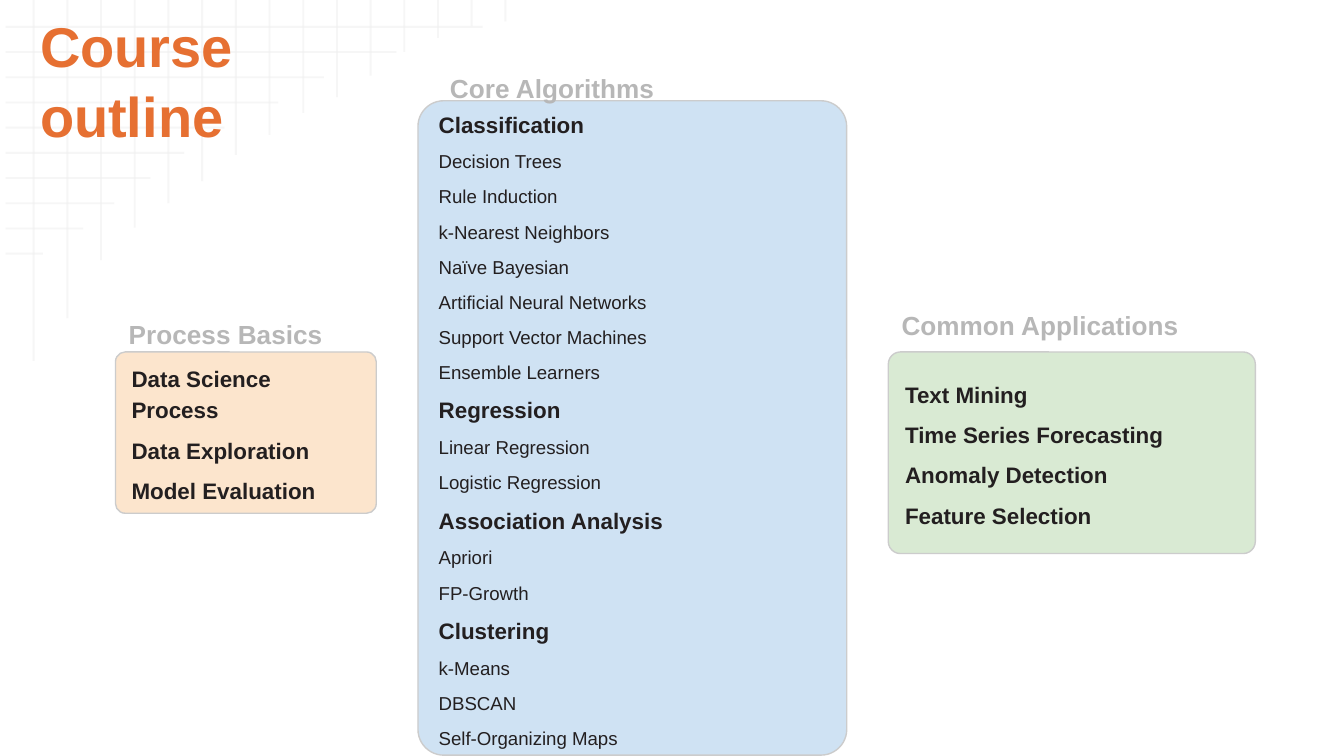
from dataclasses import dataclass

from lxml import etree
from pptx import Presentation
from pptx.dml import color
from pptx.enum import shapes, text
from pptx.oxml import ns
from pptx.util import Pt

BODY = "231F20"
HEADING = "B7B7B7"
GRID_LEFT, GRID_TOP = 3, 14.4
COLUMN_STEP, ROW_STEP = 18.05, 13.5
ROW_ENDS = (258.5, 212.4, 173.5, 149, 120.2, 98.6, 80.6, 61.2, 44.6, 23)
COLUMN_ENDS = (193.4, 170.4, 139.3, 122, 108.8, 97, 83, 72.3, 60.5, 52,
               40.5, 27.8, 20.3, 14, 11.5)


@dataclass(frozen=True)
class Line:
    words: str
    size: float = 12
    bold: bool = True


@dataclass(frozen=True)
class Box:
    left: float
    top: float
    width: float
    height: float


@dataclass(frozen=True)
class Section:
    heading: str
    heading_box: Box
    panel_box: Box
    fill: str
    lines: tuple[Line, ...]


def topics(*names: str) -> tuple[Line, ...]:
    return tuple(Line(name) for name in names)


def topic_with_methods(topic: str, *methods: str) -> tuple[Line, ...]:
    return (Line(topic), *(Line(method, 10, False) for method in methods))


SECTIONS = (
    Section("Process Basics", Box(61.9, 157, 139.7, 27.4),
            Box(61.9, 188.6, 139.7, 86.4), "FCE5CD",
            topics("Data Science Process", "Data Exploration", "Model Evaluation")),
    Section("Core Algorithms", Box(234, 28, 139.7, 21.6),
            Box(223.9, 54, 229.7, 350.6), "CFE2F3",
            topic_with_methods("Classification", "Decision Trees", "Rule Induction",
                               "k-Nearest Neighbors", "Naïve Bayesian",
                               "Artificial Neural Networks",
                               "Support Vector Machines", "Ensemble Learners")
            + topic_with_methods("Regression", "Linear Regression",
                                 "Logistic Regression")
            + topic_with_methods("Association Analysis", "Apriori", "FP-Growth")
            + topic_with_methods("Clustering", "k-Means", "DBSCAN",
                                 "Self-Organizing Maps")),
    Section("Common Applications", Box(475.9, 151.8, 187.2, 27.4),
            Box(475.9, 188.6, 196.6, 108), "D9EAD3",
            topics("Text Mining", "Time Series Forecasting", "Anomaly Detection",
                   "Feature Selection")),
)


def rgb(hex_code: str) -> color.RGBColor:
    return color.RGBColor.from_string(hex_code)


def write(frame, lines: tuple[Line, ...], *, ink: str, spacing: float = 1,
          gap: float = 0, after: float = 0) -> None:
    frame.word_wrap = True
    frame.vertical_anchor = text.MSO_ANCHOR.MIDDLE
    frame.margin_left = frame.margin_right = Pt(7.2)
    frame.margin_top = frame.margin_bottom = Pt(7.2)
    for index, line in enumerate(lines):
        paragraph = frame.add_paragraph() if index else frame.paragraphs[0]
        paragraph.alignment = text.PP_ALIGN.LEFT
        paragraph.line_spacing = spacing
        paragraph.space_before = Pt(gap if index else 0)
        run = paragraph.add_run()
        run.text = line.words
        run.font.name = "Arial"
        run.font.size = Pt(line.size)
        run.font.bold = line.bold
        run.font.color.rgb = rgb(ink)
    paragraph.space_after = Pt(after)


def add_label(slide, box: Box, lines: tuple[Line, ...], **style) -> None:
    label = slide.shapes.add_textbox(
        Pt(box.left), Pt(box.top), Pt(box.width), Pt(box.height))
    write(label.text_frame, lines, **style)


def add_panel(slide, section: Section) -> None:
    box = section.panel_box
    panel = slide.shapes.add_shape(
        shapes.MSO_SHAPE.ROUNDED_RECTANGLE,
        Pt(box.left), Pt(box.top), Pt(box.width), Pt(box.height))
    panel.adjustments[0] = 0.06
    panel.shadow.inherit = False
    panel.fill.solid()
    panel.fill.fore_color.rgb = rgb(section.fill)
    panel.line.color.rgb = rgb("CCCCCC")
    panel.line.width = Pt(0.75)
    write(panel.text_frame, section.lines, ink=BODY, spacing=1.15, gap=5, after=5)


def add_grid_line(slide, x1: float, y1: float, x2: float, y2: float) -> None:
    rule = slide.shapes.add_connector(
        shapes.MSO_CONNECTOR.STRAIGHT, Pt(x1), Pt(y1), Pt(x2), Pt(y2))
    rule.line.width = Pt(1)
    rule.line.color.rgb = rgb("EFEFEF")
    properties = rule._element.spPr
    tint = properties.find(".//" + ns.qn("a:srgbClr"))
    etree.SubElement(tint, ns.qn("a:alpha"), val="54000")
    etree.SubElement(properties, ns.qn("a:effectLst"))


def add_grid(slide) -> None:
    for row, end in enumerate(ROW_ENDS):
        y = GRID_TOP + row * ROW_STEP
        add_grid_line(slide, GRID_LEFT, y, end, y)
    for column, end in enumerate(COLUMN_ENDS, start=1):
        x = column * COLUMN_STEP
        add_grid_line(slide, x, end, x, 0)


def main() -> None:
    """Build the course outline slide."""
    deck = Presentation()
    deck.slide_width, deck.slide_height = Pt(720), Pt(405)
    slide = deck.slides.add_slide(deck.slide_layouts[6])
    add_grid(slide)
    add_label(slide, Box(14.4, 19.5, 648, 46.8),
              (Line("Course", 30), Line("outline", 30)), ink="E67032", gap=1.5)
    for section in SECTIONS:
        add_panel(slide, section)
    for section in SECTIONS:
        add_label(slide, section.heading_box, (Line(section.heading, 14),),
                  ink=HEADING, spacing=2)
    deck.save("out.pptx")


if __name__ == "__main__":
    main()
